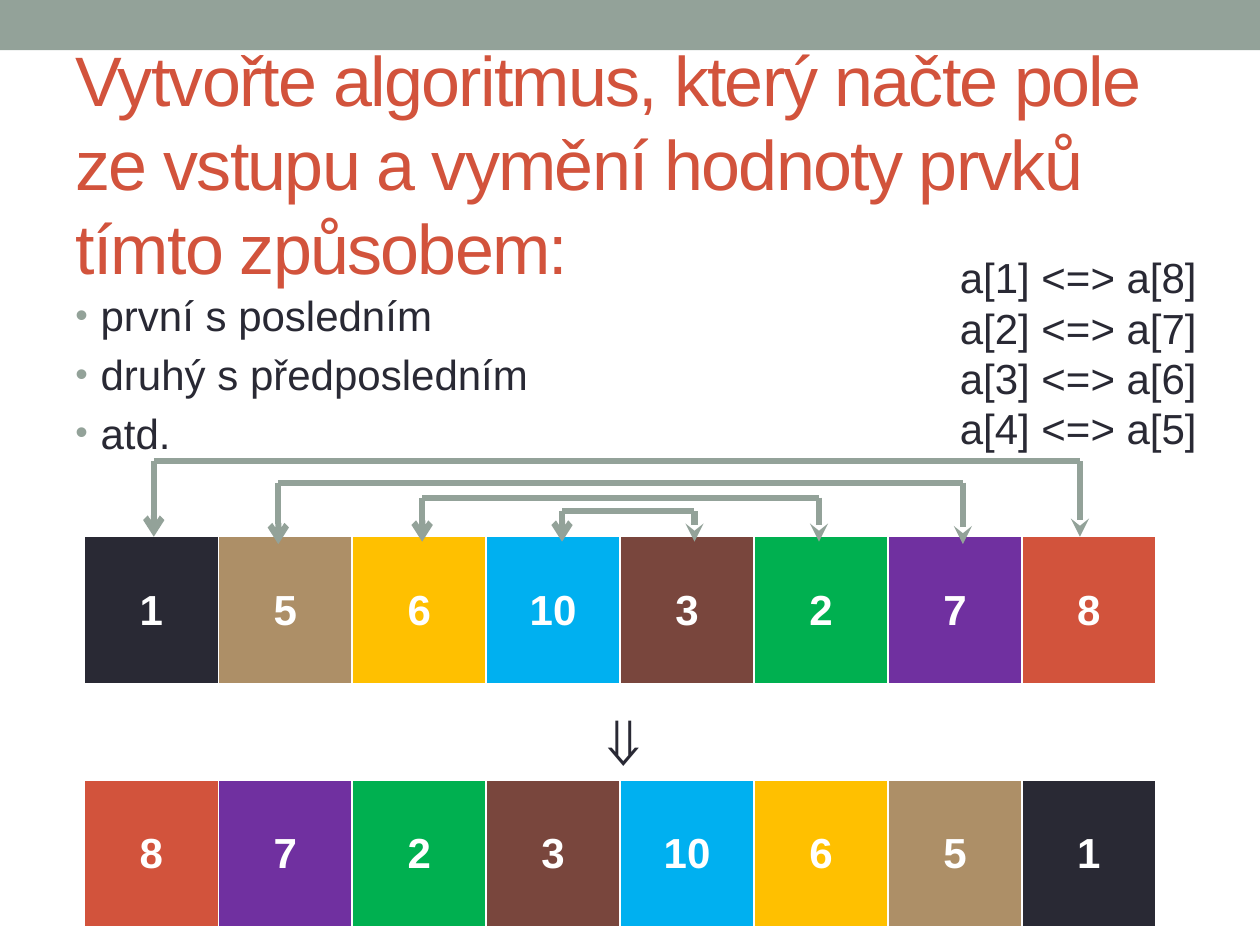
import pptx
import pptx.util
import pptx.dml.color
import pptx.enum.shapes
import pptx.enum.text
import pptx.oxml.ns
from lxml import etree
from pptx.util import Cm, Pt

COLORS = {
    "sage": "93A299", "red": "D2533C", "ink": "292934", "white": "FFFFFF",
    "tan": "AD8F67", "yellow": "FFC000", "blue": "00B0F0", "brown": "79463D",
    "green": "00B050", "purple": "7030A0",
}
TITLE = "Vytvořte algoritmus, který načte pole ze vstupu a vymění hodnoty prvků tímto způsobem:"
BULLETS = ["první s posledním", "druhý s předposledním", "atd."]
ARRAY = [("1", "ink"), ("5", "tan"), ("6", "yellow"), ("10", "blue"),
         ("3", "brown"), ("2", "green"), ("7", "purple"), ("8", "red")]
SWAPS = [f"a[{i}] <=> a[{len(ARRAY) + 1 - i}]" for i in range(1, len(ARRAY) // 2 + 1)]
# left, right, top, bottom of each swap bracket, in cm
BRACKETS = [(3.1, 21.77, 9.3, 10.82), (5.61, 19.41, 9.73, 10.97),
            (8.51, 16.51, 10.03, 10.92), (11.33, 14, 10.31, 10.92)]
TABLE_LEFT, CELL_WIDTH, CELL_HEIGHT = 1.7, 2.7, 3.0
BORDERS = [("lnL", 1), ("lnR", 1), ("lnT", 1), ("lnB", 3)]


def rgb(name):
    return pptx.dml.color.RGBColor.from_string(COLORS[name])


def add_xml(parent, tag, **attributes):
    return etree.SubElement(parent, pptx.oxml.ns.qn(tag), attributes)


def style(para, size, color, bold=False):
    para.font.name = "Arial"
    para.font.size = Pt(size)
    para.font.color.rgb = rgb(color)
    para.font.bold = bold


def add_text(slide, lines, left, top, width, height, size=24, bold=False, wrap=True):
    box = slide.shapes.add_textbox(Cm(left), Cm(top), Cm(width), Cm(height))
    frame = box.text_frame
    frame.word_wrap = wrap
    frame.text = "\n".join(lines)
    for para in frame.paragraphs:
        style(para, size, "ink", bold)
    return frame


def add_bullet(para):
    para.space_before = Pt(4.8)
    properties = para._p.get_or_add_pPr()
    properties.set("marL", str(Cm(0.51)))
    properties.set("indent", str(-Cm(0.51)))
    color = add_xml(properties, "a:buClr")
    add_xml(color, "a:srgbClr", val=COLORS["sage"])
    add_xml(properties, "a:buSzPct", val="85000")
    add_xml(properties, "a:buFont", typeface="Arial")
    add_xml(properties, "a:buChar", char="•")
    # The schema wants the default run properties after the bullet
    properties.append(properties.find(pptx.oxml.ns.qn("a:defRPr")))


def add_borders(cell):
    properties = cell._tc.get_or_add_tcPr()
    for index, (side, width) in enumerate(BORDERS):
        line = add_xml(properties, f"a:{side}", w=str(Pt(width)))
        fill = add_xml(line, "a:solidFill")
        add_xml(fill, "a:srgbClr", val=COLORS["white"])
        properties.insert(index, line)


def add_array(slide, items, top):
    table = slide.shapes.add_table(1, len(items), Cm(TABLE_LEFT), Cm(top),
                                   Cm(CELL_WIDTH * len(items)), Cm(CELL_HEIGHT)).table
    table.first_row = table.horz_banding = False
    for cell, (value, color) in zip(table.rows[0].cells, items):
        cell.text = value
        cell.vertical_anchor = pptx.enum.text.MSO_ANCHOR.MIDDLE
        cell.fill.solid()
        cell.fill.fore_color.rgb = rgb(color)
        add_borders(cell)
        para = cell.text_frame.paragraphs[0]
        para.alignment = pptx.enum.text.PP_ALIGN.CENTER
        style(para, 24, "white", bold=True)


def add_line(group, start, end, arrow_end=None, arrow_type=None):
    line = group.shapes.add_connector(pptx.enum.shapes.MSO_CONNECTOR.STRAIGHT,
                                      *map(Cm, start), *map(Cm, end))
    line.line.width = Pt(3.5)
    line.line.color.rgb = rgb("sage")
    if arrow_end:
        add_xml(line.line._get_or_add_ln(), arrow_end, type=arrow_type)
    add_xml(line._element.spPr, "a:effectLst")


def add_bracket(slide, left, right, top, bottom):
    group = slide.shapes.add_group_shape()
    add_line(group, (left, bottom), (left, top), "a:headEnd", "arrow")
    add_line(group, (left, top), (right, top))
    add_line(group, (right, top), (right, bottom), "a:tailEnd", "stealth")


def main():
    deck = pptx.Presentation()
    deck.slide_width, deck.slide_height = Cm(25.4), Cm(19.05)
    slide = deck.slides.add_slide(deck.slide_layouts[5])

    bar = slide.shapes.add_shape(pptx.enum.shapes.MSO_SHAPE.RECTANGLE,
                                 0, 0, deck.slide_width, Cm(1.01))
    bar.shadow.inherit = False
    bar.fill.solid()
    bar.fill.fore_color.rgb = rgb("sage")
    bar.line.fill.background()

    title = slide.shapes.title
    title.left, title.top, title.width, title.height = map(Cm, (1.27, 1.47, 22.86, 3.63))
    frame = title.text_frame
    frame.text = TITLE
    frame.auto_size = pptx.enum.text.MSO_AUTO_SIZE.NONE
    frame.vertical_anchor = pptx.enum.text.MSO_ANCHOR.MIDDLE
    para = frame.paragraphs[0]
    para.alignment = pptx.enum.text.PP_ALIGN.LEFT
    style(para, 40, "red")
    para.runs[0]._r.get_or_add_rPr().set("spc", "-100")

    for para in add_text(slide, BULLETS, 1.27, 5.72, 22.86, 12.06).paragraphs:
        add_bullet(para)
    add_array(slide, ARRAY[::-1], 15.72)
    add_array(slide, ARRAY, 10.82)
    add_text(slide, ["⇓"], 11.81, 13.92, 1.8, 1.96, size=40, bold=True)
    add_text(slide, SWAPS, 19.1, 4.95, 5.33, 4.37, wrap=False)
    for bracket in BRACKETS:
        add_bracket(slide, *bracket)

    deck.save("out.pptx")


if __name__ == "__main__":
    main()
